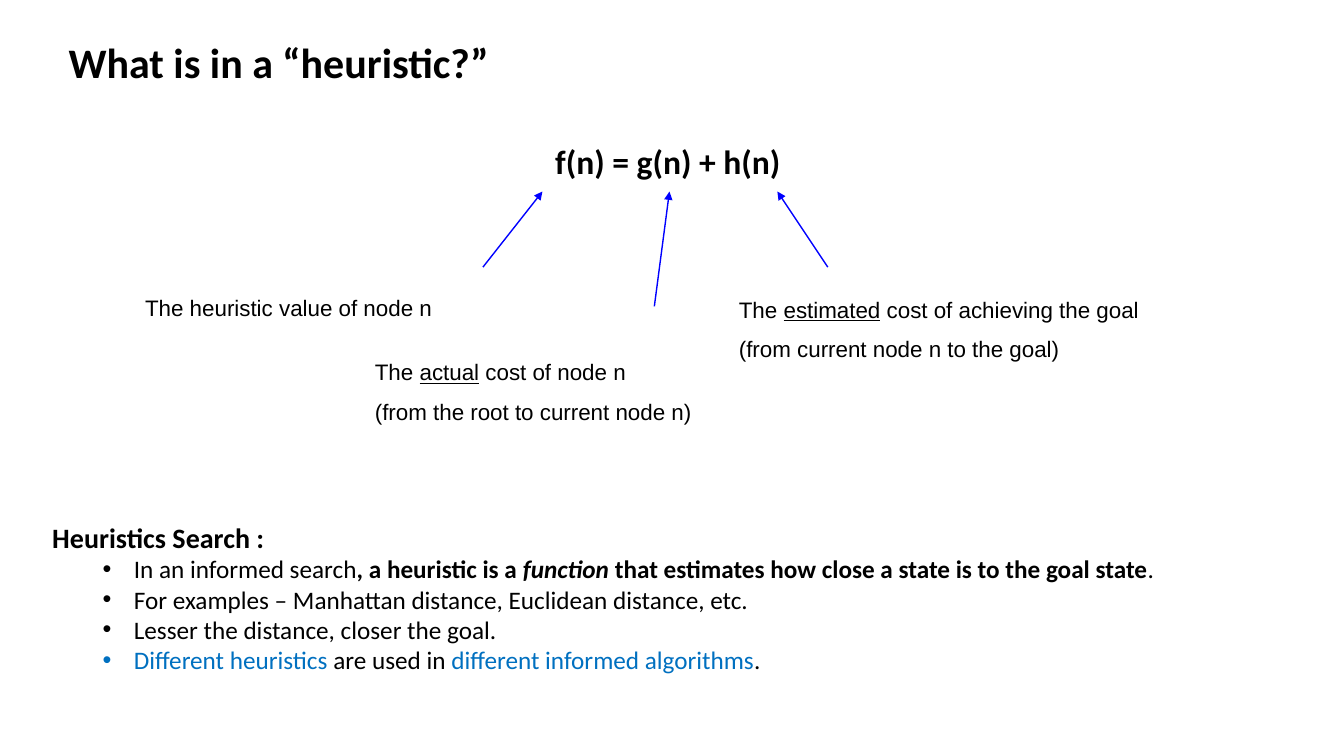
from lxml import etree
from pptx import Presentation
from pptx.dml.color import RGBColor
from pptx.enum import shapes, text
from pptx.oxml import ns
from pptx.util import Inches, Pt

BLACK = RGBColor(0x00, 0x00, 0x00)
ARROW_BLUE = RGBColor(0x00, 0x00, 0xFF)
TEXT_BLUE = RGBColor(0x00, 0x70, 0xC0)

# Arrows: start and end points
ARROWS = [
    ((4.79, 2.65), (5.38, 1.9)),
    ((6.49, 3.04), (6.64, 1.9)),
    ((8.21, 2.65), (7.71, 1.9)),
]

# Labels: box, then paragraphs of (text, style) runs
LABELS = [
    ((1.34, 2.87, 4.35, 0.37), [[("The heuristic value of node n", "")]]),
    ((3.62, 3.5, 5.06, 0.77), [
        [("The ", ""), ("actual", "u"), (" cost of node n", "")],
        [("(from the root to current node n)", "")],
    ]),
    ((7.23, 2.88, 5.92, 0.77), [
        [("The ", ""), ("estimated", "u"), (" cost of achieving the goal", "")],
        [("(from current node n to the goal)", "")],
    ]),
]

# Style letters: b bold, i italic, u underline, c coloured
BULLETS = [
    [("In an informed search", ""), (", a heuristic is a ", "b"), ("function", "bi"),
     (" that estimates how close a state is to the goal state", "b"), (".", "")],
    [("For examples – Manhattan distance, Euclidean distance, etc.", "")],
    [("Lesser the distance, closer the goal.", "")],
    [("Different heuristics ", "c"), ("are used in ", ""),
     ("different informed algorithms", "c"), (".", "")],
]


def fill_paragraph(p, runs, font, size):
    p.font.name, p.font.size = font, Pt(size)
    for words, style in runs:
        r = p.add_run()
        r.text = words
        r.font.color.rgb = TEXT_BLUE if "c" in style else BLACK
        r.font.bold = "b" in style
        if "i" in style:
            r.font.italic = True
        if "u" in style:
            r.font.underline = True


def add_text_box(slide, box, anchor=text.MSO_ANCHOR.TOP):
    tf = slide.shapes.add_textbox(*map(Inches, box)).text_frame
    tf.word_wrap = True
    tf.vertical_anchor = anchor
    return tf


def add_title(slide, words):
    sp = slide.shapes.title
    sp.left, sp.top, sp.width, sp.height = map(Inches, (0.58, 0.31, 8.42, 0.67))
    tf = sp.text_frame
    tf.auto_size = text.MSO_AUTO_SIZE.NONE
    tf.vertical_anchor = text.MSO_ANCHOR.MIDDLE
    p = tf.paragraphs[0]
    p.alignment = text.PP_ALIGN.LEFT
    p.line_spacing = 0.89
    fill_paragraph(p, [(words, "b")], "Calibri", 30)


def add_formula(slide, words):
    p = add_text_box(slide, (2.71, 1.4, 7.83, 4.94)).paragraphs[0]
    p.alignment = text.PP_ALIGN.CENTER
    p.line_spacing = 0.89
    fill_paragraph(p, [(words, "b")], "Calibri", 24)


def add_arrow(slide, start, end):
    line = slide.shapes.add_connector(
        shapes.MSO_CONNECTOR.STRAIGHT, *map(Inches, start + end))
    line.line.color.rgb = ARROW_BLUE
    line.line.width = Pt(1)
    etree.SubElement(line.line._get_or_add_ln(), ns.qn("a:tailEnd"), type="triangle")
    etree.SubElement(line._element.spPr, ns.qn("a:effectLst"))


def add_label(slide, box, paragraphs):
    tf = add_text_box(slide, box, text.MSO_ANCHOR.MIDDLE)
    for i, runs in enumerate(paragraphs):
        p = tf.add_paragraph() if i else tf.paragraphs[0]
        if i:
            p.space_before = Pt(9)
        fill_paragraph(p, runs, "Arial", 16)


def set_bullet(p):
    pPr = p._p.get_or_add_pPr()
    pPr.set("marL", str(Inches(0.81)))
    pPr.set("indent", str(Inches(-0.31)))
    bullet_font = etree.Element(ns.qn("a:buFont"), typeface="Arial")
    bullet = etree.Element(ns.qn("a:buChar"), char="•")
    pPr.insert(0, bullet_font)
    pPr.insert(1, bullet)


def add_summary(slide, heading, bullets):
    tf = add_text_box(slide, (0.42, 5.11, 12.73, 1.65))
    fill_paragraph(tf.paragraphs[0], [(heading, "b")], "Calibri", 20)
    for runs in bullets:
        p = tf.add_paragraph()
        p.level = 1
        fill_paragraph(p, runs, "Calibri", 18)
        set_bullet(p)


def main():
    prs = Presentation()
    prs.slide_width, prs.slide_height = Inches(13.33), Inches(7.5)
    slide = prs.slides.add_slide(prs.slide_layouts[5])

    # Title and formula
    add_title(slide, "What is in a “heuristic?”")
    add_formula(slide, "f(n) = g(n) + h(n)")

    # Explanation of each term
    for start, end in ARROWS:
        add_arrow(slide, start, end)
    for box, paragraphs in LABELS:
        add_label(slide, box, paragraphs)

    # Summary
    add_summary(slide, "Heuristics Search :", BULLETS)
    prs.save("out.pptx")


if __name__ == "__main__":
    main()
